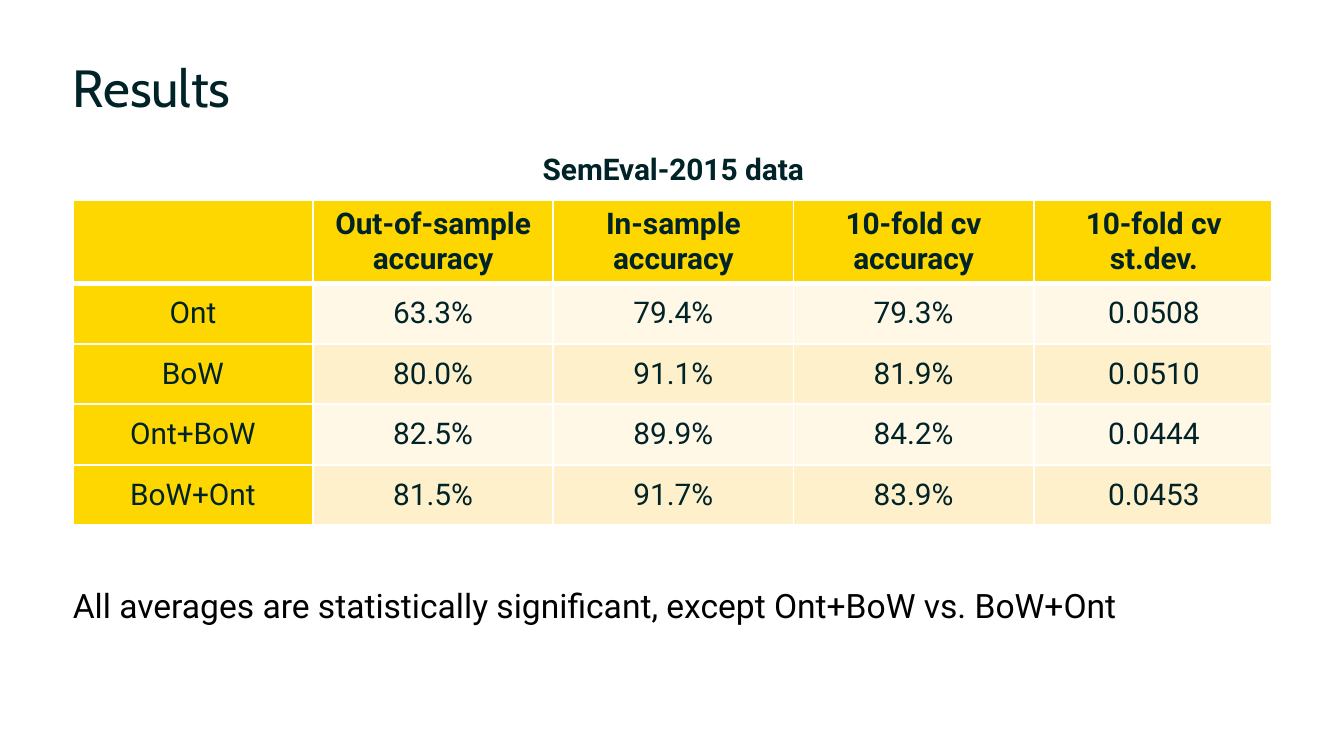
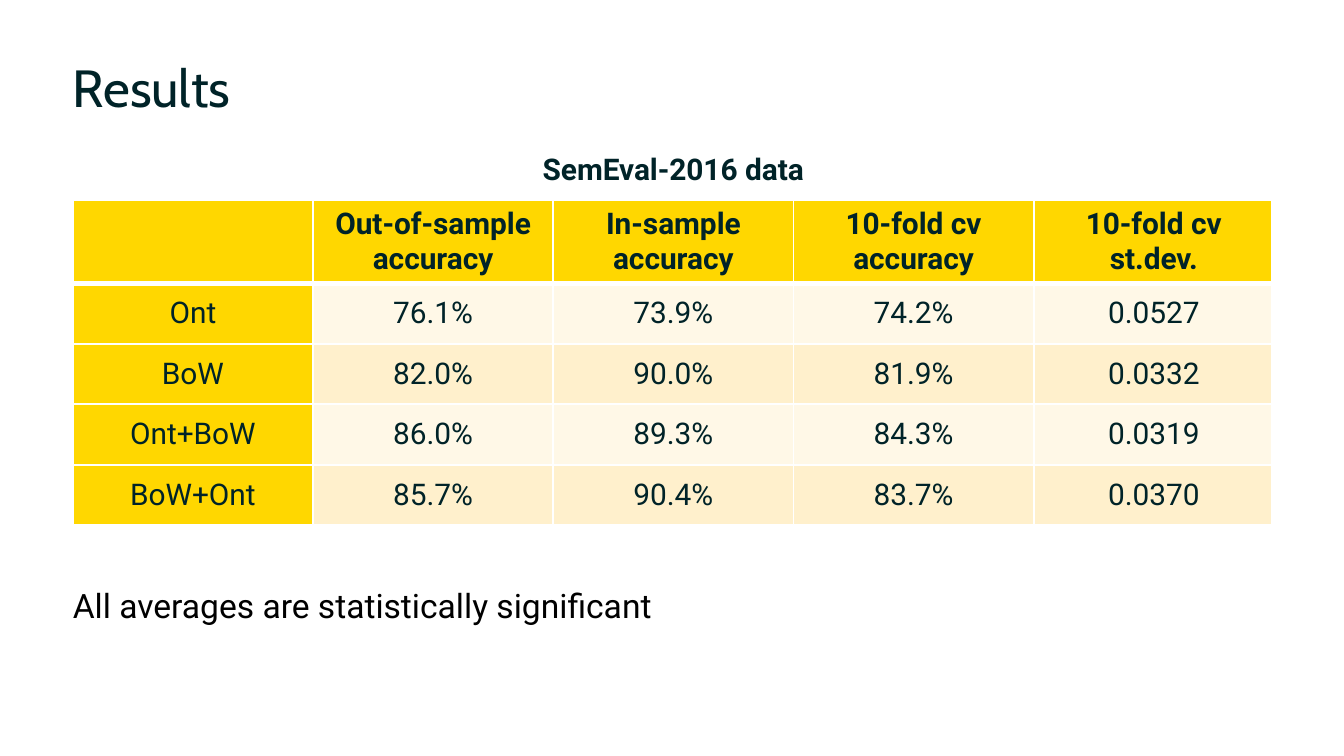
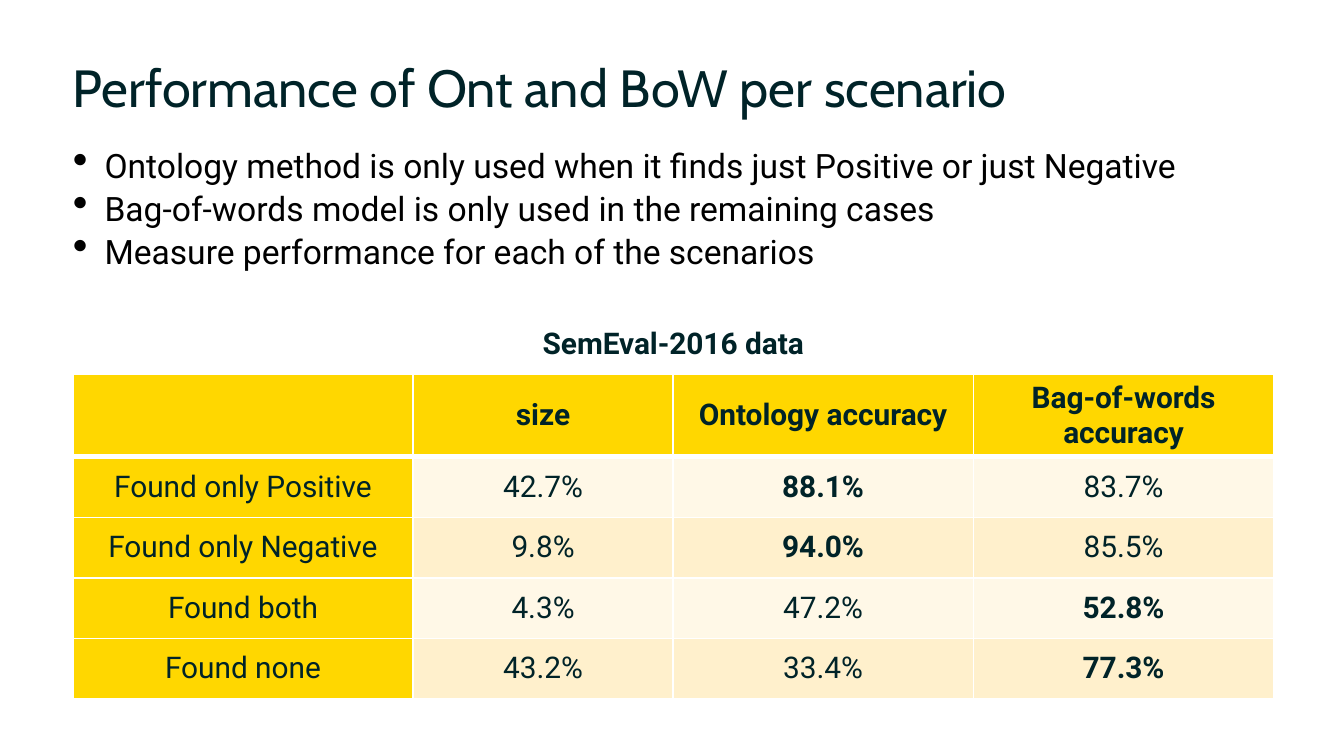
from dataclasses import dataclass
from pptx import Presentation
from pptx.dml.color import RGBColor
from pptx.enum.text import MSO_ANCHOR, PP_ALIGN
from pptx.oxml.ns import qn
from pptx.util import Pt
from lxml.etree import SubElement


@dataclass(frozen=True)
class Theme:
    ink: RGBColor = RGBColor.from_string("002328")
    black: RGBColor = RGBColor.from_string("000000")
    white: RGBColor = RGBColor.from_string("FFFFFF")
    gold: RGBColor = RGBColor.from_string("FFD700")
    cream: RGBColor = RGBColor.from_string("FFF8E7")
    sand: RGBColor = RGBColor.from_string("FFF0CC")
    title_font: str = "Cabin"
    body_font: str = "Roboto"
    title_size: int = 28
    body_size: int = 18
    table_size: int = 16
    title_leading: int = 32
    body_leading: int = 23
    thin: int = 1
    thick: int = 3


THEME = Theme()
LEFT, WIDTH = 39, 643.5
TITLE_BOX = (LEFT, 31, WIDTH, 45)
ROW_HEIGHT, TABLE_HEIGHT = 32.4, 206.6

RESULT_HEADER = ["", "Out-of-sample accuracy", "In-sample accuracy", "10-fold cv accuracy", "10-fold cv st.dev."]
RESULTS = [
    ("SemEval-2015 data", [
        ["Ont", "63.3%", "79.4%", "79.3%", "0.0508"],
        ["BoW", "80.0%", "91.1%", "81.9%", "0.0510"],
        ["Ont+BoW", "82.5%", "89.9%", "84.2%", "0.0444"],
        ["BoW+Ont", "81.5%", "91.7%", "83.9%", "0.0453"],
    ], "All averages are statistically significant, except Ont+BoW vs. BoW+Ont"),
    ("SemEval-2016 data", [
        ["Ont", "76.1%", "73.9%", "74.2%", "0.0527"],
        ["BoW", "82.0%", "90.0%", "81.9%", "0.0332"],
        ["Ont+BoW", "86.0%", "89.3%", "84.3%", "0.0319"],
        ["BoW+Ont", "85.7%", "90.4%", "83.7%", "0.0370"],
    ], "All averages are statistically significant"),
]
SCENARIO_POINTS = [
    "Ontology method is only used when it finds just Positive or just Negative",
    "Bag-of-words model is only used in the remaining cases",
    "Measure performance for each of the scenarios",
]
SCENARIO_HEADER = ["", "size", "Ontology accuracy", "Bag-of-words accuracy"]
SCENARIOS = [
    ["Found only Positive", "42.7%", "88.1%", "83.7%"],
    ["Found only Negative", "9.8%", "94.0%", "85.5%"],
    ["Found both", "4.3%", "47.2%", "52.8%"],
    ["Found none", "43.2%", "33.4%", "77.3%"],
]
BEST_SCORES = {"88.1%", "94.0%", "52.8%", "77.3%"}


def apply(target, values):
    for name, value in values.items():
        setattr(target, name, value)


def write(para, text, font, size, color, bold=False):
    span = para.add_run()
    span.text = text
    apply(span.font, {"name": font, "size": Pt(size), "bold": bold})
    span.font.color.rgb = color


def add_bullet(para):
    props = para._p.get_or_add_pPr()
    props.set("marL", str(Pt(17)))
    props.set("indent", str(-Pt(17)))
    SubElement(props, qn("a:buSzPct")).set("val", "130000")
    SubElement(props, qn("a:buChar")).set("char", "•")


def add_text(page, box, lines, font, size, color, leading, bulleted=False):
    frame = page.shapes.add_textbox(*map(Pt, box)).text_frame
    apply(frame, {"word_wrap": True, "margin_left": 0, "margin_top": 0, "margin_right": 0, "margin_bottom": 0})
    for index, line in enumerate(lines):
        para = frame.add_paragraph() if index else frame.paragraphs[0]
        para.line_spacing = Pt(leading)
        if bulleted:
            add_bullet(para)
        write(para, line, font, size, color)


def add_title(page, text):
    add_text(page, TITLE_BOX, [text], THEME.title_font, THEME.title_size, THEME.ink, THEME.title_leading)


def add_body(page, box, lines, bulleted=False):
    add_text(page, box, lines, THEME.body_font, THEME.body_size, THEME.black, THEME.body_leading, bulleted)


def add_borders(cell, widths):
    props = cell._tc.get_or_add_tcPr()
    for side, width in widths.items():
        line = SubElement(props, qn(f"a:ln{side}"), w=str(Pt(width)))
        fill = SubElement(line, qn("a:solidFill"))
        SubElement(fill, qn("a:srgbClr")).set("val", str(THEME.white))


def cell_fill(row, column):
    if row == 0:
        return THEME.white
    if row == 1 or column == 0:
        return THEME.gold
    return THEME.sand if row % 2 else THEME.cream


def add_score_table(page, top, widths, caption, header, scores, right_edge):
    rows = [[caption] + [""] * (len(header) - 1), header] + scores
    box = (LEFT, top, sum(widths), TABLE_HEIGHT)
    holder = page.shapes.add_table(len(rows), len(widths), *map(Pt, box))
    table = holder.table
    apply(table, {"first_row": False, "horz_banding": False})
    for column, width in zip(table.columns, widths):
        column.width = Pt(width)
    for row in table.rows:
        row.height = Pt(ROW_HEIGHT)
    holder.height = Pt(TABLE_HEIGHT)
    for r, values in enumerate(rows):
        for c, text in enumerate(values):
            cell = table.cell(r, c)
            is_last = r == 0 or c == len(widths) - 1
            add_borders(cell, {
                "L": THEME.thin,
                "R": right_edge if is_last else THEME.thin,
                "T": THEME.thick if r == 2 else THEME.thin,
                "B": THEME.thick if r == 1 else THEME.thin,
            })
            cell.fill.solid()
            cell.fill.fore_color.rgb = cell_fill(r, c)
            apply(cell, {
                "vertical_anchor": MSO_ANCHOR.MIDDLE,
                "margin_left": Pt(9), "margin_right": Pt(9),
                "margin_top": Pt(3), "margin_bottom": Pt(3),
            })
            if text:
                para = cell.text_frame.paragraphs[0]
                para.alignment = PP_ALIGN.CENTER
                bold = r < 2 or text in BEST_SCORES
                write(para, text, THEME.body_font, THEME.table_size, THEME.ink, bold)
    table.cell(0, 0).merge(table.cell(0, len(widths) - 1))


def build_results(page, caption, scores, remark):
    add_title(page, "Results")
    columns = len(RESULT_HEADER)
    add_score_table(page, 75, [WIDTH / columns] * columns, caption, RESULT_HEADER, scores, THEME.thick)
    add_body(page, (LEFT, 312, WIDTH, 29), [remark])


def build_scenarios(page):
    add_title(page, "Performance of Ont and BoW per scenario")
    add_body(page, (LEFT, 76.5, WIDTH, 263.5), SCENARIO_POINTS, bulleted=True)
    add_score_table(page, 168, [182.4, 139.1, 161, 161], "SemEval-2016 data", SCENARIO_HEADER, SCENARIOS, THEME.thin)


def main():
    deck = Presentation()
    apply(deck, {"slide_width": Pt(720), "slide_height": Pt(405)})
    blank = deck.slide_layouts[6]
    for caption, scores, remark in RESULTS:
        build_results(deck.slides.add_slide(blank), caption, scores, remark)
    build_scenarios(deck.slides.add_slide(blank))
    deck.save("out.pptx")


if __name__ == "__main__":
    main()
